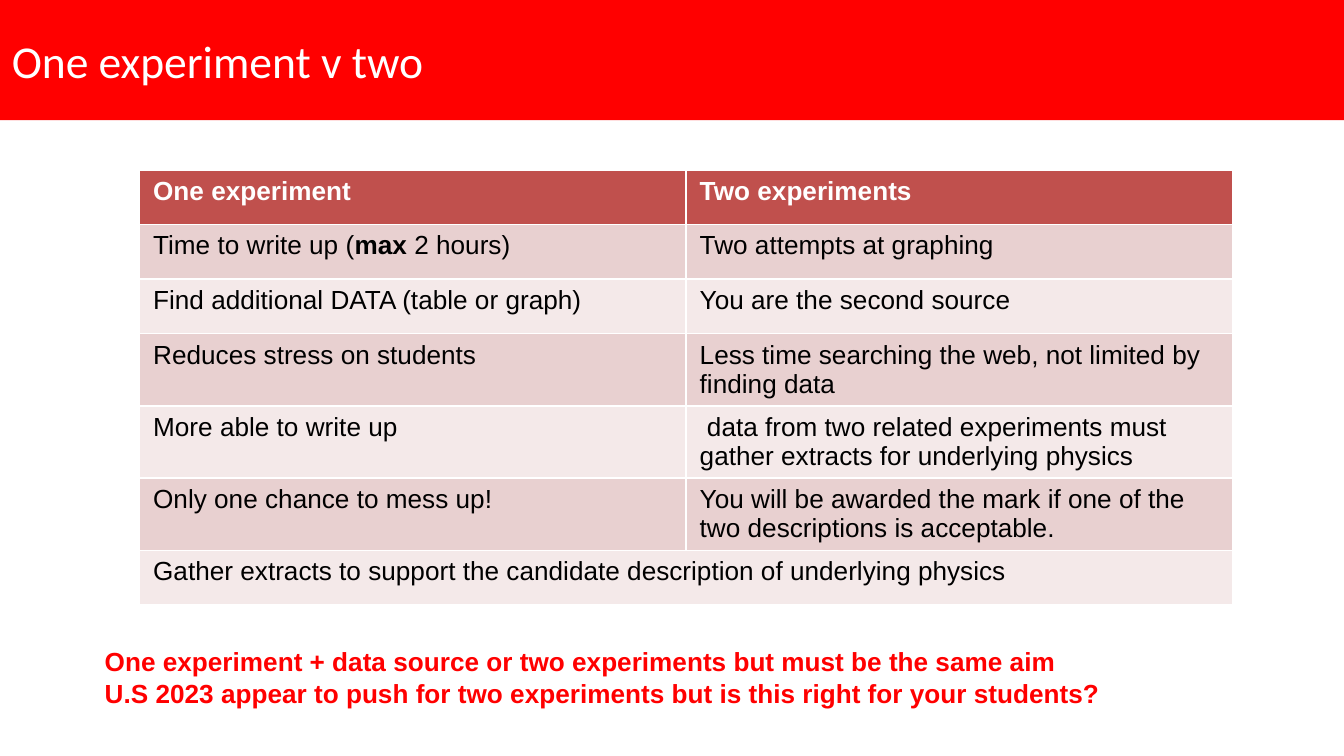
from dataclasses import dataclass

from pptx import Presentation
from pptx.dml.color import RGBColor as Rgb
from pptx.enum.text import MSO_ANCHOR as Anchor, MSO_AUTO_SIZE as AutoSize, PP_ALIGN as Align
from pptx.util import Cm, Pt


@dataclass(frozen=True)
class Theme:
    red: Rgb = Rgb(0xFF, 0x00, 0x00)
    white: Rgb = Rgb(0xFF, 0xFF, 0xFF)
    black: Rgb = Rgb(0x00, 0x00, 0x00)
    header: Rgb = Rgb(0xC0, 0x50, 0x4D)
    odd_row: Rgb = Rgb(0xE8, 0xD0, 0xD0)
    even_row: Rgb = Rgb(0xF4, 0xE9, 0xE9)
    title_font: str = "Calibri"
    body_font: str = "Arial"
    title_size: Pt = Pt(24.4)
    body_size: Pt = Pt(14)


theme = Theme()


def style_span(span, color, bold=False, font=theme.body_font, size=theme.body_size):
    span.font.name = font
    span.font.size = size
    span.font.bold = bold
    span.font.color.rgb = color


deck = Presentation()
deck.slide_width, deck.slide_height = Cm(25.4), Cm(14.28)
page = deck.slides.add_slide(deck.slide_layouts[5])

# Title band
title = page.shapes.title
title.left, title.top, title.width, title.height = Cm(-0.03), Cm(0), Cm(25.53), Cm(2.27)
title.fill.solid()
title.fill.fore_color.rgb = theme.red
title.text_frame.text = "One experiment v two"
title.text_frame.auto_size = AutoSize.NONE
title.text_frame.vertical_anchor = Anchor.MIDDLE
heading = title.text_frame.paragraphs[0]
heading.alignment = Align.LEFT
style_span(heading.runs[0], theme.white, font=theme.title_font, size=theme.title_size)

# Comparison table: a cell is a list of spans, and every second span is bold
rows = [
    (["One experiment"], ["Two experiments"]),
    (["Time to write up (", "max", " 2 hours)"], ["Two attempts at graphing"]),
    (["Find additional DATA (table or graph)"], ["You are the second source"]),
    (["Reduces stress on students"],
     ["Less time searching the web, not limited by finding data"]),
    (["More able to write up"],
     [" data from two related experiments must gather extracts for underlying physics"]),
    (["Only one chance to mess up!"],
     ["You will be awarded the mark if one of the two descriptions is acceptable."]),
    (["Gather extracts to support the candidate description of underlying physics"], []),
]
row_height = Cm(1.03)
table = page.shapes.add_table(len(rows), 2, Cm(2.64), Cm(3.21), Cm(20.66),
                              row_height * len(rows)).table
for r, row in enumerate(rows):
    table.rows[r].height = row_height
    is_header = r == 0
    fill = theme.header if is_header else theme.odd_row if r % 2 else theme.even_row
    for c, texts in enumerate(row):
        cell = table.cell(r, c)
        cell.fill.solid()
        cell.fill.fore_color.rgb = fill
        para = cell.text_frame.paragraphs[0]
        for i, text in enumerate(texts):
            span = para.add_run()
            span.text = text
            style_span(span, theme.white if is_header else theme.black,
                       bold=is_header or i % 2 == 1)
table.cell(len(rows) - 1, 0).merge(table.cell(len(rows) - 1, 1))

# Closing remark
box = page.shapes.add_textbox(Cm(1.73), Cm(12.07), Cm(20.65), Cm(1.45))
box.text_frame.word_wrap = True
box.text_frame.text = (
    "One experiment + data source or two experiments but must be the same aim\n"
    "U.S 2023 appear to push for two experiments but is this right for your students?"
)
for para in box.text_frame.paragraphs:
    style_span(para.runs[0], theme.red, bold=True)

deck.save("out.pptx")
